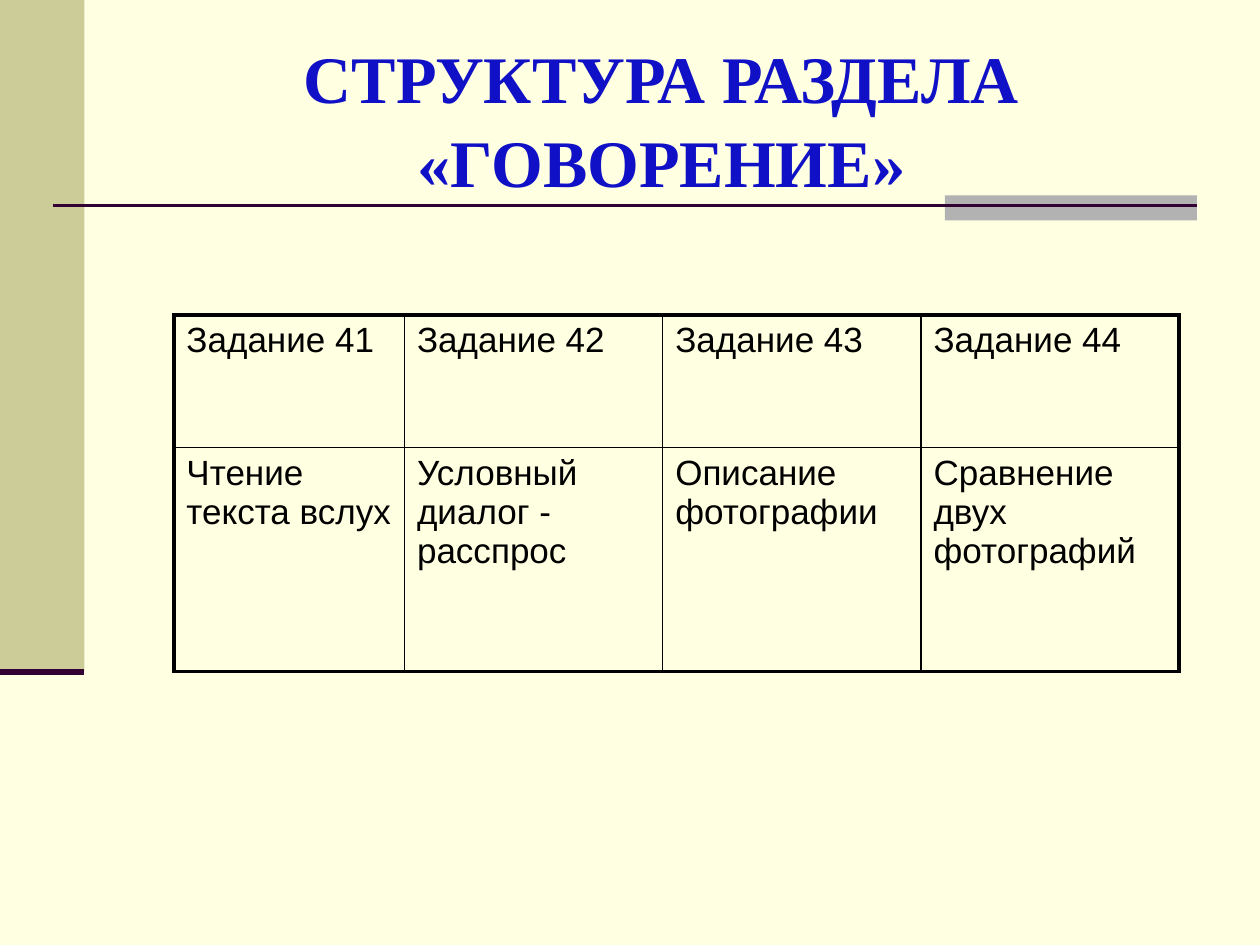
import pptx
import pptx.dml.color
import pptx.enum.shapes
import pptx.enum.text
import pptx.oxml.ns
import pptx.util
from lxml import etree

Inches = pptx.util.Inches
Pt = pptx.util.Pt
RGBColor = pptx.dml.color.RGBColor
qn = pptx.oxml.ns.qn

CREAM = RGBColor(0xFF, 0xFF, 0xE1)
KHAKI = RGBColor(0xCC, 0xCC, 0x99)
GRAY = RGBColor(0xB2, 0xB2, 0xB2)
PLUM = RGBColor(0x33, 0x00, 0x33)
BLUE = RGBColor(0x10, 0x10, 0xC6)
BLACK = RGBColor(0x00, 0x00, 0x00)

TASKS = [
    ["Задание 41", "Задание 42", "Задание 43", "Задание 44"],
    ["Чтение текста вслух", "Условный диалог - расспрос",
     "Описание фотографии", "Сравнение двух фотографий"],
]


class SlideBuilder:
    heading_font = "Times New Roman"
    body_font = "Arial"
    heading_size = 38
    body_size = 20
    outer_border = 2.25
    inner_border = 1

    def __init__(self, slide):
        self.slide = slide
        fill = slide.background.fill
        fill.solid()
        fill.fore_color.rgb = CREAM

    def block(self, left, top, width, height, color):
        block = self.slide.shapes.add_shape(
            pptx.enum.shapes.MSO_SHAPE.RECTANGLE,
            Inches(left), Inches(top), Inches(width), Inches(height))
        block.shadow.inherit = False
        block.fill.solid()
        block.fill.fore_color.rgb = color
        block.line.fill.background()
        return block

    def rule(self, left, right, y, width):
        rule = self.slide.shapes.add_connector(
            pptx.enum.shapes.MSO_CONNECTOR.STRAIGHT,
            Inches(left), Inches(y), Inches(right), Inches(y))
        rule.line.color.rgb = PLUM
        rule.line.width = Pt(width)
        etree.SubElement(rule._element.spPr, qn("a:effectLst"))

    def heading(self, text, left, top, width, height):
        frame = self.slide.shapes.add_textbox(
            Inches(left), Inches(top), Inches(width), Inches(height)).text_frame
        frame.word_wrap = True
        frame.vertical_anchor = pptx.enum.text.MSO_ANCHOR.MIDDLE
        paragraph = frame.paragraphs[0]
        paragraph.text = text
        paragraph.alignment = pptx.enum.text.PP_ALIGN.CENTER
        paragraph.line_spacing = 1.05
        self.style(paragraph, self.heading_font, self.heading_size, BLUE, True)

    def table(self, rows, left, top, widths, heights):
        table = self.slide.shapes.add_table(
            len(rows), len(widths), Inches(left), Inches(top),
            Inches(sum(widths)), Inches(sum(heights))).table
        table.first_row = False
        table.horz_banding = False
        for column, width in zip(table.columns, widths):
            column.width = Inches(width)
        for row, height in zip(table.rows, heights):
            row.height = Inches(height)
        for r, texts in enumerate(rows):
            for c, text in enumerate(texts):
                cell = table.cell(r, c)
                cell.text = text
                self.style(cell.text_frame.paragraphs[0],
                           self.body_font, self.body_size, BLACK, False)
                self.borders(cell, {
                    "a:lnL": c == 0,
                    "a:lnR": c == len(widths) - 1,
                    "a:lnT": r == 0,
                    "a:lnB": r == len(rows) - 1,
                })
                cell.fill.background()

    def borders(self, cell, sides):
        properties = cell._tc.get_or_add_tcPr()
        for side, is_outer in sides.items():
            width = Pt(self.outer_border if is_outer else self.inner_border)
            border = etree.SubElement(properties, qn(side), w=str(width))
            fill = etree.SubElement(border, qn("a:solidFill"))
            etree.SubElement(fill, qn("a:srgbClr"), val=str(BLACK))

    def style(self, paragraph, name, size, color, bold):
        font = paragraph.font
        font.name = name
        font.size = Pt(size)
        font.color.rgb = color
        font.bold = bold


def main():
    presentation = pptx.Presentation()
    presentation.slide_width = Inches(10)
    presentation.slide_height = Inches(7.5)
    builder = SlideBuilder(
        presentation.slides.add_slide(presentation.slide_layouts[6]))

    builder.block(0, 0, 0.67, 5.33, KHAKI)
    builder.block(7.5, 1.55, 2, 0.2, GRAY)
    builder.rule(0.42, 9.5, 1.63, 1.5)
    builder.rule(0, 0.67, 5.33, 3.5)
    builder.heading("СТРУКТУРА РАЗДЕЛА «ГОВОРЕНИЕ»", 1, 0.3, 8.5, 1.25)
    builder.table(TASKS, 1.38, 2.5, [1.83] + [2.05] * 3, [1.05, 1.78])

    presentation.save("out.pptx")


if __name__ == "__main__":
    main()
